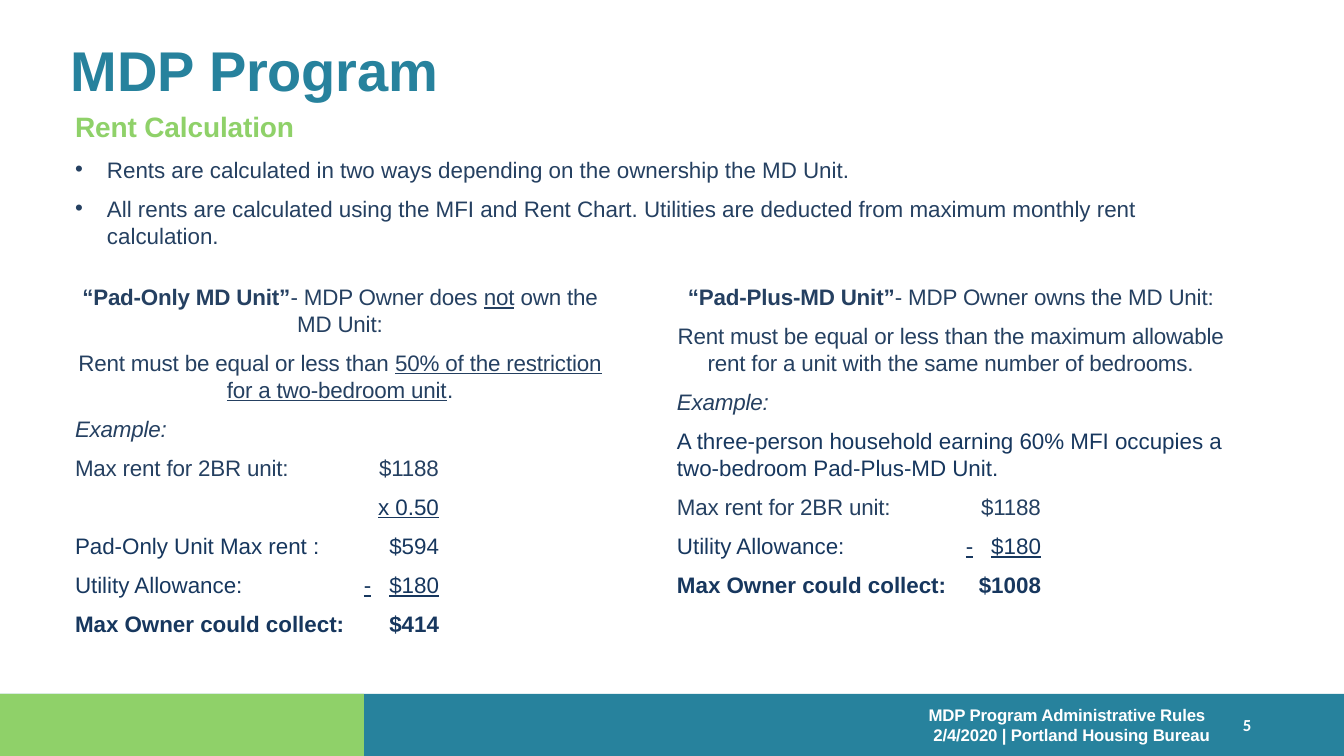
from lxml import etree
from pptx import Presentation, util as u
from pptx.dml.color import RGBColor
from pptx.enum import shapes, text
from pptx.oxml.ns import qn

COLORS = {"teal": "27829D", "green": "8FD169", "slate": "254061",
          "navy": "17375E", "white": "FFFFFF"}
ALIGN = {"l": text.PP_ALIGN.LEFT, "c": text.PP_ALIGN.CENTER, "r": text.PP_ALIGN.RIGHT}
BULLET_INDENT = 32
MINUS_TAB, AMOUNT_TAB = (289, "l"), (364, "r")


class SlideBuilder:
    """Holds the text style and the slide being built."""

    SCALE = 914400 / 100.8

    def __init__(self, presentation, font="Arial", size=16, color="slate"):
        self.font, self.size, self.color = font, size, color
        presentation.slide_width, presentation.slide_height = self.px(1344), self.px(756)
        self.slide = presentation.slides.add_slide(presentation.slide_layouts[6])

    def px(self, length):
        return u.Emu(round(length * self.SCALE))

    def band(self, left, top, width, height, color):
        shape = self.slide.shapes.add_shape(
            shapes.MSO_SHAPE.RECTANGLE, *map(self.px, (left, top, width, height)))
        shape.shadow.inherit = False
        shape.fill.solid()
        shape.fill.fore_color.rgb = RGBColor.from_string(COLORS[color])
        shape.line.fill.background()

    def box(self, left, top, width, height, inset=0):
        frame = self.slide.shapes.add_textbox(
            *map(self.px, (left, top, width, height))).text_frame
        frame.word_wrap = True
        frame.auto_size = text.MSO_AUTO_SIZE.SHAPE_TO_FIT_TEXT
        frame.margin_left = frame.margin_right = frame.margin_bottom = 0
        frame.margin_top = self.px(inset)
        return frame

    def paragraph(self, frame, *runs, align="l", before=8.7, line=None,
                  bullet=False, tabs=(), **style):
        first = frame.paragraphs[0]
        paragraph = frame.add_paragraph() if first.runs else first
        paragraph.alignment = ALIGN[align]
        paragraph.space_before = u.Pt(before)
        if line:
            paragraph.line_spacing = u.Pt(line)
        properties = paragraph._p.get_or_add_pPr()
        if bullet:
            properties.set("marL", str(self.px(BULLET_INDENT)))
            properties.set("indent", str(-self.px(BULLET_INDENT)))
            etree.SubElement(properties, qn("a:buFont"), typeface="Arial")
            etree.SubElement(properties, qn("a:buChar"), char="•")
        if tabs:
            stops = etree.SubElement(properties, qn("a:tabLst"))
            for position, side in tabs:
                etree.SubElement(stops, qn("a:tab"), pos=str(self.px(position)), algn=side)
        for run in runs:
            words, marks = (run, "") if isinstance(run, str) else run
            self.run(paragraph, words, marks, **style)

    def run(self, paragraph, words, marks="", size=None, color=None, font=None, spacing=-10):
        run = paragraph.add_run()
        run.text = words
        run.font.name = font or self.font
        run.font.size = u.Pt(size or self.size)
        run.font.color.rgb = RGBColor.from_string(COLORS[color or self.color])
        run.font.bold = "b" in marks
        run.font.italic = "i" in marks
        run.font.underline = "u" in marks
        run._r.get_or_add_rPr().set("spc", str(spacing))

    def amount(self, frame, label, value, marks="", value_marks=""):
        self.paragraph(frame, (label + "\t", marks), (value, marks + value_marks),
                       tabs=[AMOUNT_TAB], color="navy", spacing=0)

    def rent(self, frame):
        self.paragraph(frame, "Max rent for 2BR unit:\t", "$1188", tabs=[AMOUNT_TAB])

    def utility(self, frame):
        self.paragraph(frame, "Utility Allowance:\t", ("-\t$180", "u"),
                       tabs=[MINUS_TAB, AMOUNT_TAB], color="navy", spacing=0)


def main():
    presentation = Presentation()
    builder = SlideBuilder(presentation)
    builder.band(0, 694, 1344, 62, "teal")
    builder.band(0, 694, 364, 62, "green")

    title = builder.box(71, 35, 1192, 70, inset=1)
    builder.paragraph(title, ("MDP Program", "b"), before=1, size=40, color="teal")

    intro = builder.box(75, 109, 1162, 142, inset=1)
    builder.paragraph(intro, ("Rent Calculation", "b"), size=20, color="green")
    for point in (
        "Rents are calculated in two ways depending on the ownership the MD Unit.",
        "All rents are calculated using the MFI and Rent Chart. Utilities are deducted "
        "from maximum monthly rent calculation.",
    ):
        builder.paragraph(intro, point, bullet=True, spacing=0)

    pad_only = builder.box(75, 283, 530, 373)
    builder.paragraph(pad_only, ("“Pad-Only MD Unit”", "b"), "- MDP Owner does ",
                      ("not", "u"), " own the MD Unit:", align="c")
    builder.paragraph(pad_only, "Rent must be equal or less than ",
                      ("50% of the restriction for a two-bedroom unit", "u"), ".", align="c")
    builder.paragraph(pad_only, ("Example:", "i"))
    builder.rent(pad_only)
    builder.amount(pad_only, "", "x 0.50", value_marks="u")
    builder.amount(pad_only, "Pad-Only Unit Max rent :", "$594")
    builder.utility(pad_only)
    builder.amount(pad_only, "Max Owner could collect:", "$414", "b")

    pad_plus = builder.box(677, 283, 548, 378)
    builder.paragraph(pad_plus, ("“Pad-Plus-MD Unit”", "b"),
                      "- MDP Owner owns the MD Unit:", align="c")
    builder.paragraph(pad_plus, "Rent must be equal or less than the maximum allowable rent "
                      "for a unit with the same number of bedrooms.", align="c")
    builder.paragraph(pad_plus, ("Example:", "i"))
    builder.paragraph(pad_plus, "A three-person household earning 60% MFI occupies a "
                      "two-bedroom Pad-Plus-MD Unit.", color="navy", spacing=0)
    builder.rent(pad_plus)
    builder.utility(pad_plus)
    builder.amount(pad_plus, "Max Owner could collect:", "$1008", "b")

    footer = builder.box(537, 705, 673, 39)
    for line in ("MDP Program Administrative Rules ", "2/4/2020 | Portland Housing Bureau"):
        builder.paragraph(footer, (line, "b"), align="r", before=0, line=14.2,
                          size=12, color="white")

    page_number = builder.box(1243, 714, 20, 21, inset=1)
    builder.paragraph(page_number, ("5", "b"), before=0.4, size=12, color="white",
                      font="Calibri", spacing=0)

    presentation.save("out.pptx")


if __name__ == "__main__":
    main()
